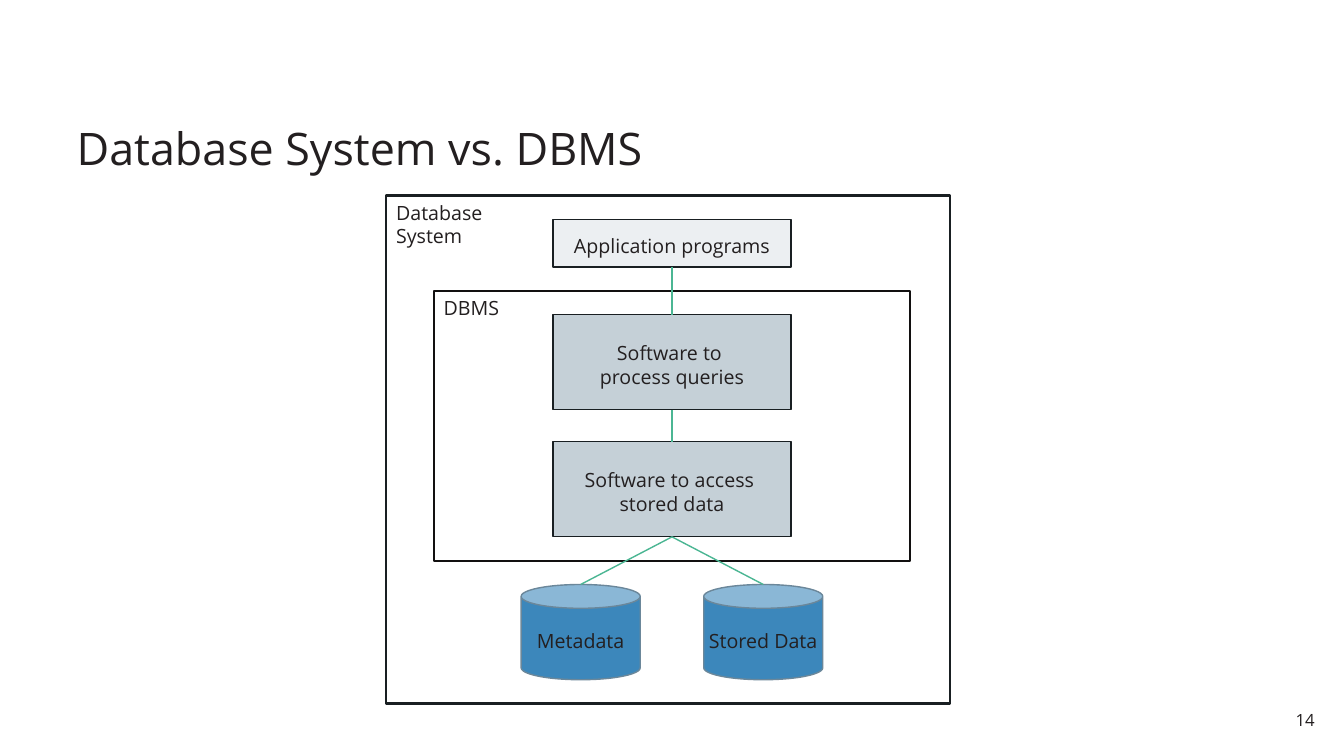
from lxml.etree import SubElement
from pptx import Presentation
from pptx.dml.color import RGBColor
from pptx.enum.shapes import MSO_CONNECTOR as Link, MSO_SHAPE as Shape
from pptx.enum.text import MSO_ANCHOR as Anchor, MSO_AUTO_SIZE as AutoSize, PP_ALIGN as Align
from pptx.oxml.ns import qn
from pptx.util import Inches, Pt

COLORS = {
    "text": "231F20", "frame": "191F22", "inner frame": "121010",
    "program": "ECEFF2", "software": "C5D0D7",
    "store": "3C87BB", "store edge": "6B879A", "link": "4BB693",
}
FONT = "Open Sans"
CELL = 0.1575
LEFT, TOP = 3.83, 1.94
TOP_SIDE, BOTTOM_SIDE = 0, 2


def color(name):
    return RGBColor.from_string(COLORS[name])


def grid_x(column):
    return Inches(LEFT + column * CELL)


def grid_y(row):
    return Inches(TOP + row * CELL)


def write(box, text, size, align, anchor, margins, wrap=True):
    """Fill a box with text; margins are left/right, top and bottom in inches."""
    frame = box.text_frame
    frame.text = text
    frame.word_wrap = wrap
    frame.auto_size = AutoSize.NONE
    frame.vertical_anchor = anchor
    side, top, bottom = margins
    frame.margin_left = frame.margin_right = Inches(side)
    frame.margin_top, frame.margin_bottom = Inches(top), Inches(bottom)
    for para in frame.paragraphs:
        para.alignment = align
        para.font.name = FONT
        para.font.size = Pt(size)
        para.font.color.rgb = color("text")


def add_box(page, kind, cells, text, edge, fill=None, weight=1.0, wrap=True):
    """Add a shape at (column, row, columns, rows); without fill it is a labelled frame."""
    column, row, columns, rows = cells
    box = page.shapes.add_shape(kind, grid_x(column), grid_y(row),
                                Inches(columns * CELL), Inches(rows * CELL))
    box.shadow.inherit = False
    box.line.color.rgb = color(edge)
    box.line.width = Pt(weight)
    if fill:
        box.fill.solid()
        box.fill.fore_color.rgb = color(fill)
        align, anchor = Align.CENTER, Anchor.MIDDLE
    else:
        box.fill.background()
        align, anchor = Align.LEFT, Anchor.TOP
    write(box, text, 14, align, anchor, (0.1, 0.05, 0), wrap)
    return box


def add_link(page, upper, lower, join_lower=True):
    """Draw a line from the bottom of one shape to the top of another."""
    line = page.shapes.add_connector(
        Link.STRAIGHT, upper.left + upper.width // 2, upper.top + upper.height,
        lower.left + lower.width // 2, lower.top)
    line.begin_connect(upper, BOTTOM_SIDE)
    if join_lower:
        line.end_connect(lower, TOP_SIDE)
    line.line.color.rgb = color("link")
    line.line.width = Pt(1)
    SubElement(line._element.spPr, qn("a:effectLst"))


def add_title(page, text):
    title = page.shapes.title
    title.left, title.top = Inches(0.68), Inches(0.76)
    title.width, title.height = Inches(11.97), Inches(1.02)
    write(title, text, 32, Align.LEFT, Anchor.BOTTOM, (0.08, 0.04, 0.04))
    title.text_frame.paragraphs[0].line_spacing = 0.9


def add_page_number(page, number):
    box = page.shapes.add_textbox(Inches(12.65), Inches(6.98), Inches(0.47), Inches(0.31))
    write(box, number, 12, Align.RIGHT, Anchor.TOP, (0.08, 0.06, 0.06))


def main():
    deck = Presentation()
    deck.slide_width, deck.slide_height = Inches(13.33), Inches(7.5)
    page = deck.slides.add_slide(deck.slide_layouts[5])

    add_title(page, "Database System vs. DBMS")
    add_page_number(page, "14")
    add_box(page, Shape.RECTANGLE, (0, 0, 35.5, 32), "Database\vSystem", "frame", weight=1.5)
    add_box(page, Shape.RECTANGLE, (3, 6, 30, 17), "DBMS", "inner frame", weight=1.5)

    stores = [
        add_box(page, Shape.CAN, (column, 24.5, 7.5, 6), text, "store edge", "store", wrap=False)
        for column, text in ((8.5, "Metadata"), (20, "Stored Data"))
    ]
    programs = add_box(page, Shape.RECTANGLE, (10.5, 1.5, 15, 3),
                       "Application programs", "frame", "program")
    queries, access = [
        add_box(page, Shape.RECTANGLE, (10.5, row, 15, 6), text, "frame", "software", wrap=False)
        for row, text in ((7.5, "Software to \nprocess queries"),
                          (15.5, "Software to access \nstored data"))
    ]

    add_link(page, programs, queries)
    add_link(page, queries, access)
    for store in stores:
        add_link(page, access, store, join_lower=False)
    deck.save("out.pptx")


if __name__ == "__main__":
    main()
